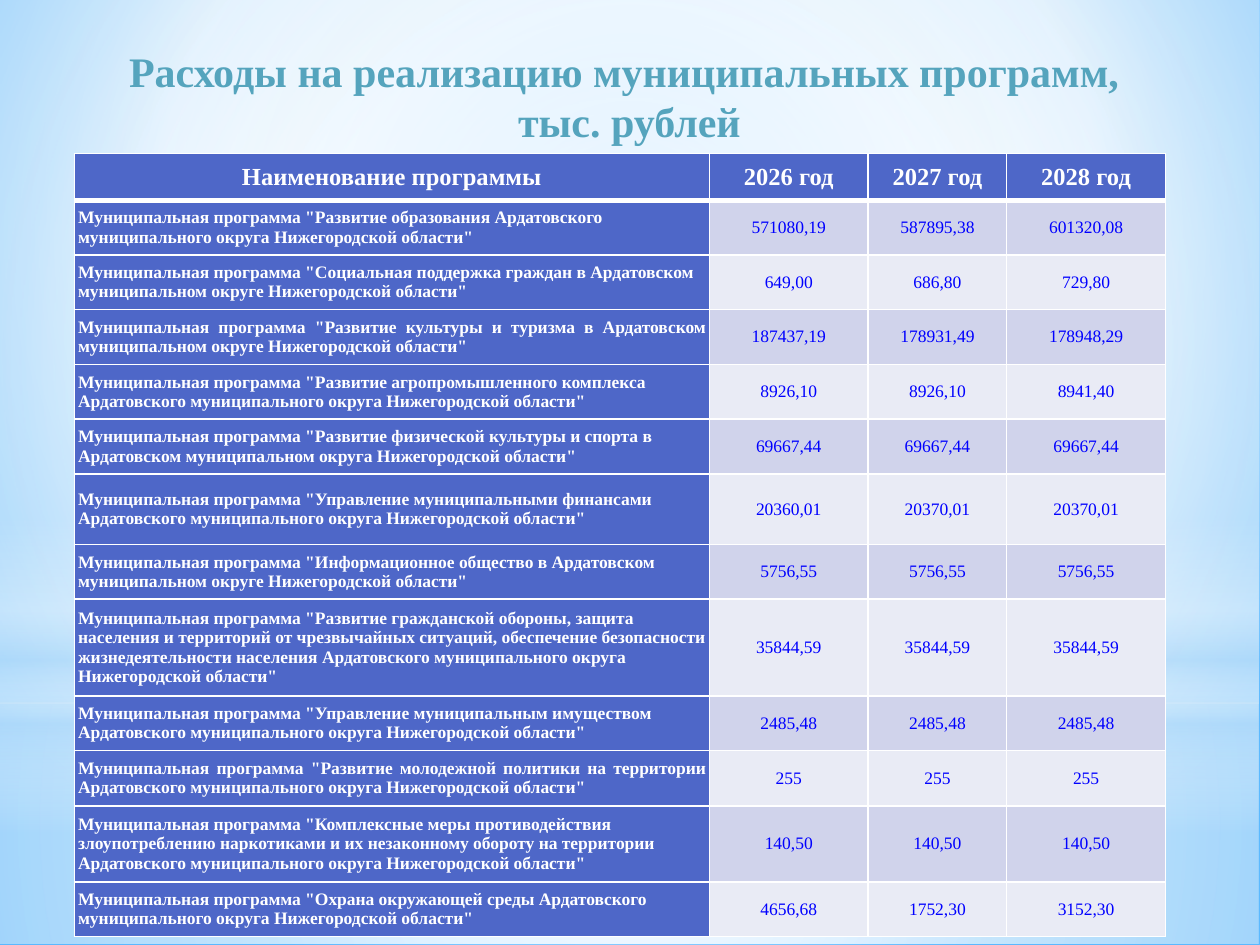
import pptx
import pptx.dml.color
import pptx.enum.shapes
import pptx.enum.text
import pptx.oxml
import pptx.oxml.ns
import pptx.util
from dataclasses import dataclass

Inches = pptx.util.Inches
Align = pptx.enum.text.PP_ALIGN
Anchor = pptx.enum.text.MSO_ANCHOR
Preset = pptx.enum.shapes.MSO_SHAPE


@dataclass(frozen=True)
class Theme:
    font: str = "Times New Roman"
    title_color: str = "55A4BD"
    header_fill: str = "4E67C8"
    bands: tuple = ("D0D3EB", "E9EBF5")
    white: str = "FFFFFF"
    sky: str = "B4DCFA"
    figure: str = "0000FF"
    title_size: int = 24
    header_size: int = 14
    body_size: int = 10
    border: float = 0.96
    header_rule: float = 3


THEME = Theme()
CENTERED = (50, 50, 50, 50)
COLUMN_WIDTHS = (5.04, 1.26, 1.1, 1.26)
HEADER_HEIGHT = 0.37
HEADINGS = ("Наименование программы", "2026 год", "2027 год", "2028 год")
PROGRAMS = [
    ("Развитие образования Ардатовского муниципального округа", 0.4, Align.LEFT,
     "571080,19", "587895,38", "601320,08"),
    ("Социальная поддержка граждан в Ардатовском муниципальном округе", 0.4, Align.LEFT,
     "649,00", "686,80", "729,80"),
    ("Развитие культуры и туризма в Ардатовском муниципальном округе", 0.4, Align.JUSTIFY,
     "187437,19", "178931,49", "178948,29"),
    ("Развитие агропромышленного комплекса Ардатовского муниципального округа", 0.4, Align.LEFT,
     "8926,10", "8926,10", "8941,40"),
    ("Развитие физической культуры и спорта в Ардатовском муниципальном округа", 0.4, Align.LEFT,
     "69667,44", "69667,44", "69667,44"),
    ("Управление муниципальными финансами Ардатовского муниципального округа", 0.56, Align.LEFT,
     "20360,01", "20370,01", "20370,01"),
    ("Информационное общество в Ардатовском муниципальном округе", 0.4, Align.LEFT,
     "5756,55", "5756,55", "5756,55"),
    ("Развитие гражданской обороны, защита населения и территорий от чрезвычайных ситуаций, "
     "обеспечение безопасности жизнедеятельности населения Ардатовского муниципального округа",
     0.7, Align.LEFT, "35844,59", "35844,59", "35844,59"),
    ("Управление муниципальным имуществом Ардатовского муниципального округа", 0.4, Align.LEFT,
     "2485,48", "2485,48", "2485,48"),
    ("Развитие молодежной политики на территории Ардатовского муниципального округа", 0.44,
     Align.JUSTIFY, "255", "255", "255"),
    ("Комплексные меры противодействия злоупотреблению наркотиками и их незаконному обороту "
     "на территории Ардатовского муниципального округа", 0.55, Align.LEFT,
     "140,50", "140,50", "140,50"),
    ("Охрана окружающей среды Ардатовского муниципального округа", 0.4, Align.LEFT,
     "4656,68", "1752,30", "3152,30"),
]


def rgb(value):
    return pptx.dml.color.RGBColor.from_string(value)


def apply_format(target, values):
    for name, value in values.items():
        setattr(target, name, value)


def set_font(paragraph, size, color, bold):
    apply_format(paragraph.font, {"name": THEME.font, "size": pptx.util.Pt(size), "bold": bold})
    paragraph.font.color.rgb = rgb(color)


def replace_with_gradient(solid_fill, stops, focus=None):
    marks = "".join(
        f'<a:gs pos="{position * 1000}"><a:srgbClr val="{color}">'
        f'<a:alpha val="{opacity * 1000}"/></a:srgbClr></a:gs>'
        for position, color, opacity in stops)
    if focus:
        left, top, right, bottom = (side * 1000 for side in focus)
        direction = (f'<a:path path="circle"><a:fillToRect l="{left}" t="{top}" '
                     f'r="{right}" b="{bottom}"/></a:path>')
    else:
        direction = '<a:lin ang="5400000" scaled="0"/>'
    gradient = pptx.oxml.parse_xml(
        f'<a:gradFill {pptx.oxml.ns.nsdecls("a")} rotWithShape="1">'
        f'<a:gsLst>{marks}</a:gsLst>{direction}</a:gradFill>')
    solid_fill.getparent().replace(solid_fill, gradient)


def paint_background(slide):
    slide.background.fill.solid()
    solid_fill = slide._element.xpath(".//p:bgPr/a:solidFill")[0]
    stops = [(0, "9CD4FF", 100), (60, THEME.white, 100), (100, "5BB9FF", 100)]
    replace_with_gradient(solid_fill, stops, (50, 25, 50, 75))


def add_glow(slide, preset, top, height, stops, focus=CENTERED):
    glow = slide.shapes.add_shape(preset, 0, Inches(top), Inches(9.99), Inches(height))
    glow.shadow.inherit = False
    glow.line.fill.background()
    glow.fill.solid()
    replace_with_gradient(glow._element.xpath("./p:spPr/a:solidFill")[0], stops, focus)


def add_sky(slide):
    white, sky = THEME.white, THEME.sky
    add_glow(slide, Preset.RECTANGLE, 5.58, 1.91,
             [(0, white, 91), (37, white, 76), (100, sky, 79)])
    add_glow(slide, Preset.RECTANGLE, 0, 5.58,
             [(0, white, 89), (48, white, 62), (100, sky, 79)])
    add_glow(slide, Preset.RECTANGLE, 4.12, 2.49,
             [(0, white, 0), (29, white, 30), (45, sky, 40),
              (55, white, 26), (65, sky, 60), (100, white, 0)], None)
    add_glow(slide, Preset.OVAL, 1.75, 5.58, [(0, white, 100), (56, white, 0)])


def add_title(slide):
    title = slide.shapes.add_textbox(Inches(0.5), Inches(0.3), Inches(8.99), Inches(0.92))
    apply_format(title.text_frame, {"word_wrap": True, "vertical_anchor": Anchor.MIDDLE})
    heading = title.text_frame.paragraphs[0]
    heading.text = "Расходы на реализацию муниципальных программ, \vтыс. рублей"
    heading.alignment = Align.CENTER
    set_font(heading, THEME.title_size, THEME.title_color, True)


def add_borders(cell, top, bottom):
    widths = {"lnL": THEME.border, "lnR": THEME.border, "lnT": top, "lnB": bottom}
    properties = cell._tc.get_or_add_tcPr()
    for side, width in widths.items():
        properties.append(pptx.oxml.parse_xml(
            f'<a:{side} {pptx.oxml.ns.nsdecls("a")} w="{pptx.util.Pt(width)}"><a:solidFill>'
            f'<a:srgbClr val="{THEME.white}"/></a:solidFill></a:{side}>'))


def fill_cell(cell, text, fill, size, color, bold, alignment=Align.CENTER,
              margin=0.03, top=THEME.border, bottom=THEME.border):
    add_borders(cell, top, bottom)
    cell.fill.solid()
    cell.fill.fore_color.rgb = rgb(fill)
    apply_format(cell, {
        "text": text, "vertical_anchor": Anchor.MIDDLE,
        "margin_left": Inches(margin), "margin_right": Inches(margin),
        "margin_top": Inches(0.05), "margin_bottom": Inches(0.05)})
    paragraph = cell.text_frame.paragraphs[0]
    paragraph.alignment = alignment
    set_font(paragraph, size, color, bold)


def add_expenses(slide):
    heights = [HEADER_HEIGHT] + [program[1] for program in PROGRAMS]
    expenses = slide.shapes.add_table(
        len(heights), len(COLUMN_WIDTHS), Inches(0.59), Inches(1.22),
        Inches(sum(COLUMN_WIDTHS)), Inches(sum(heights))).table
    for column, width in zip(expenses.columns, COLUMN_WIDTHS):
        column.width = Inches(width)
    for row, height in zip(expenses.rows, heights):
        row.height = Inches(height)
    for column, heading in enumerate(HEADINGS):
        fill_cell(expenses.cell(0, column), heading, THEME.header_fill, THEME.header_size,
                  THEME.white, True, margin=0.04, bottom=THEME.header_rule)
    for row, (name, _, alignment, *amounts) in enumerate(PROGRAMS, start=1):
        top = THEME.header_rule if row == 1 else THEME.border
        fill_cell(expenses.cell(row, 0), f'Муниципальная программа "{name} Нижегородской области"',
                  THEME.header_fill, THEME.body_size, THEME.white, True, alignment, top=top)
        for column, amount in enumerate(amounts, start=1):
            fill_cell(expenses.cell(row, column), amount, THEME.bands[(row - 1) % 2],
                      THEME.body_size, THEME.figure, False, top=top)


def main():
    presentation = pptx.Presentation()
    apply_format(presentation, {"slide_width": Inches(10), "slide_height": Inches(7.5)})
    slide = presentation.slides.add_slide(presentation.slide_layouts[6])
    paint_background(slide)
    add_sky(slide)
    add_title(slide)
    add_expenses(slide)
    presentation.save("out.pptx")


if __name__ == "__main__":
    main()
